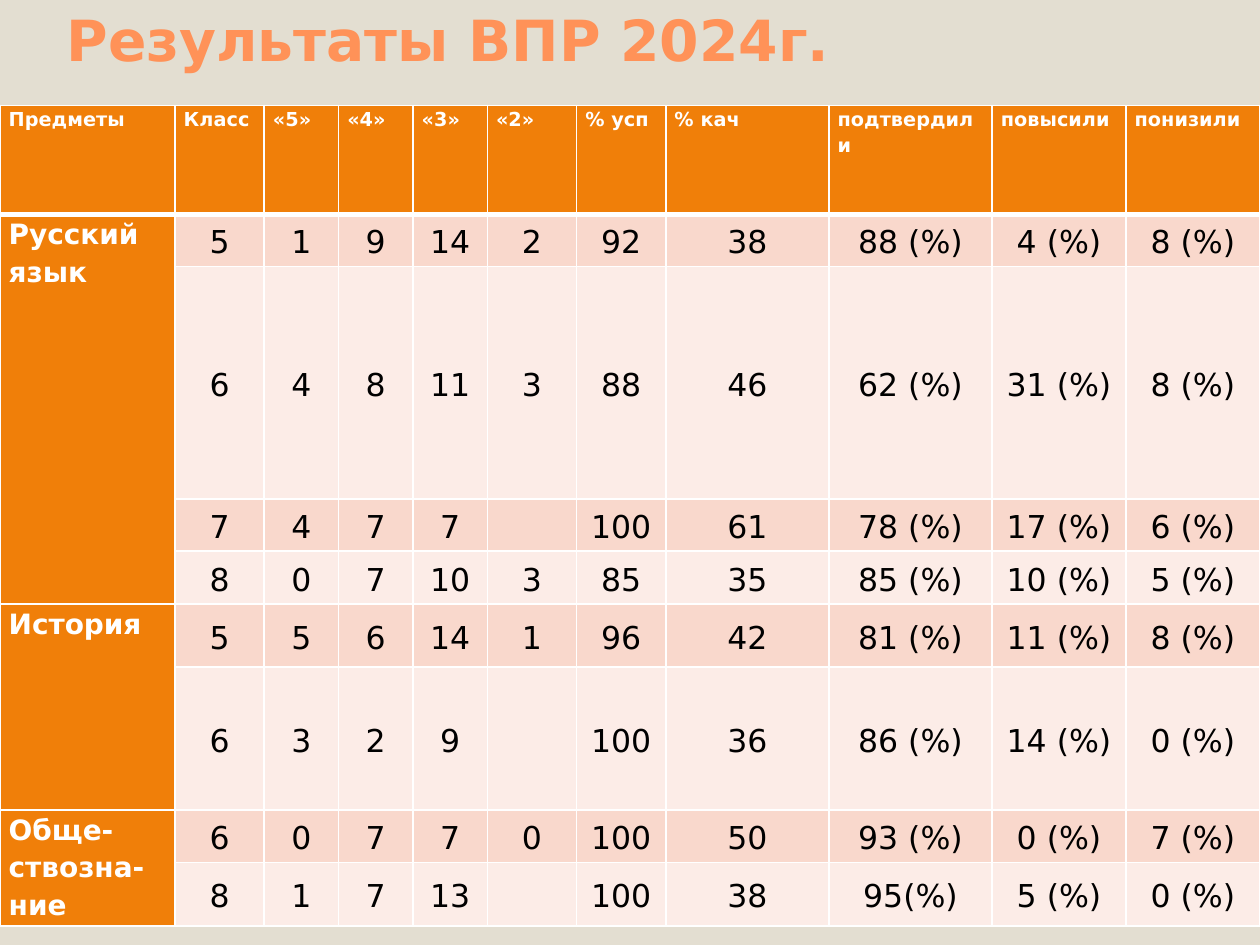
from pptx import Presentation
from pptx.dml.color import RGBColor
from pptx.enum.text import MSO_ANCHOR, PP_ALIGN
from pptx.oxml.ns import qn
from pptx.util import Pt
from lxml.etree import SubElement

TITLE = "Результаты ВПР 2024г."
HEADER = ["Предметы", "Класс", "«5»", "«4»", "«3»", "«2»", "% усп", "% кач",
          "подтвердили", "повысили", "понизили"]
SUBJECTS = [
    ("Русский язык", PP_ALIGN.JUSTIFY, [
        ["5", "1", "9", "14", "2", "92", "38", "88 (%)", "4 (%)", "8 (%)"],
        ["6", "4", "8", "11", "3", "88", "46", "62 (%)", "31 (%)", "8 (%)"],
        ["7", "4", "7", "7", "", "100", "61", "78 (%)", "17 (%)", "6 (%)"],
        ["8", "0", "7", "10", "3", "85", "35", "85 (%)", "10 (%)", "5 (%)"],
    ]),
    ("История", PP_ALIGN.LEFT, [
        ["5", "5", "6", "14", "1", "96", "42", "81 (%)", "11 (%)", "8 (%)"],
        ["6", "3", "2", "9", "", "100", "36", "86 (%)", "14 (%)", "0 (%)"],
    ]),
    ("Обще-ствозна-ние", PP_ALIGN.JUSTIFY, [
        ["6", "0", "7", "7", "0", "100", "50", "93 (%)", "0 (%)", "7 (%)"],
        ["8", "1", "7", "13", "", "100", "38", "95(%)", "5 (%)", "0 (%)"],
    ]),
]
COLUMN_WIDTHS = [100, 51, 42.5, 42.5, 42.5, 51, 51, 93.25, 93.25, 76.5, 76.5]
ROW_HEIGHTS = [62.2, 29.8, 133, 29.8, 30.2, 36, 81.8, 29.8, 33.6]
ORANGE, WHITE, BLACK = "F07F09", "FFFFFF", "000000"
BANDS = ["F9D8CC", "FCECE7"]


def color(value):
    return RGBColor.from_string(value)


def write(frame, text, size, fill, bold=False, align=PP_ALIGN.LEFT,
          line_spacing=1, space_after=0):
    frame.word_wrap = True
    para = frame.paragraphs[0]
    para.alignment = align
    para.line_spacing = line_spacing
    para.space_after = Pt(space_after)
    span = para.add_run()
    span.text = text
    span.font.name = "DejaVu Sans"
    span.font.size = Pt(size)
    span.font.bold = bold
    span.font.color.rgb = color(fill)


def add_borders(cell, top=1, bottom=1):
    properties = cell._tc.get_or_add_tcPr()
    sides = [("a:lnL", 1), ("a:lnR", 1), ("a:lnT", top), ("a:lnB", bottom)]
    for position, (tag, width) in enumerate(sides):
        line = SubElement(properties, qn(tag), w=str(Pt(width)))
        SubElement(SubElement(line, qn("a:solidFill")), qn("a:srgbClr"), val=WHITE)
        properties.insert(position, line)


def fill_cell(cell, text, fill, size, text_color, anchor=MSO_ANCHOR.TOP,
              top=1, bottom=1, **style):
    cell.margin_left = cell.margin_right = Pt(5)
    cell.margin_top = cell.margin_bottom = Pt(0)
    cell.vertical_anchor = anchor
    cell.fill.solid()
    cell.fill.fore_color.rgb = color(fill)
    add_borders(cell, top, bottom)
    if text:
        write(cell.text_frame, text, size, text_color,
              line_spacing=1.15, space_after=10, **style)


def add_title(page):
    box = page.shapes.add_textbox(Pt(31), Pt(9.4), Pt(684), Pt(33.8))
    frame = box.text_frame
    frame.margin_top, frame.margin_bottom = Pt(0), Pt(1.8)
    frame.vertical_anchor = MSO_ANCHOR.BOTTOM
    write(frame, TITLE, 32.4, "FF9258", bold=True)


def add_results(page):
    table = page.shapes.add_table(
        len(ROW_HEIGHTS), len(COLUMN_WIDTHS), Pt(0), Pt(60.2),
        Pt(sum(COLUMN_WIDTHS)), Pt(sum(ROW_HEIGHTS))).table
    table.horz_banding = False
    for column, width in zip(table.columns, COLUMN_WIDTHS):
        column.width = Pt(width)
    for row, height in zip(table.rows, ROW_HEIGHTS):
        row.height = Pt(height)

    for column, text in enumerate(HEADER):
        fill_cell(table.cell(0, column), text, ORANGE, 11, WHITE, bottom=3,
                  bold=True, align=PP_ALIGN.JUSTIFY)

    row = 1
    for subject, align, results in SUBJECTS:
        first = row
        for values in results:
            top = 3 if row == 1 else 1
            fill_cell(table.cell(row, 0), subject if row == first else "", ORANGE,
                      16, WHITE, top=top, bold=True, align=align)
            for column, text in enumerate(values, 1):
                fill_cell(table.cell(row, column), text, BANDS[(row - 1) % 2],
                          18, BLACK, MSO_ANCHOR.MIDDLE, top=top,
                          align=PP_ALIGN.CENTER)
            row += 1
        table.cell(first, 0).merge(table.cell(row - 1, 0))


def main():
    deck = Presentation()
    deck.slide_width, deck.slide_height = Pt(720), Pt(540)
    page = deck.slides.add_slide(deck.slide_layouts[6])
    page.background.fill.solid()
    page.background.fill.fore_color.rgb = color("E3DED1")
    add_title(page)
    add_results(page)
    deck.save("out.pptx")


if __name__ == "__main__":
    main()
